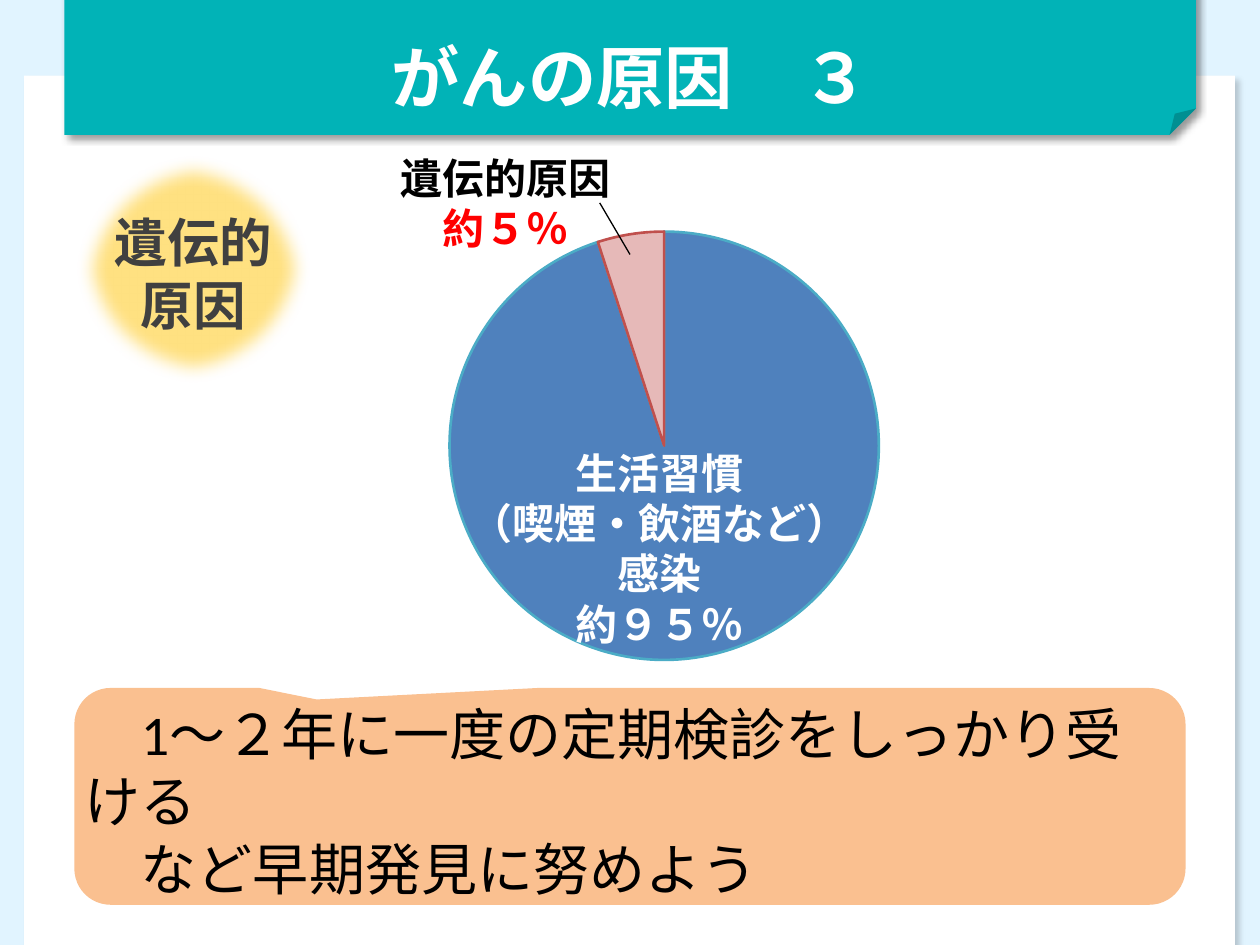
from lxml import etree
from pptx import Presentation
from pptx.chart.data import CategoryChartData
from pptx.dml.color import RGBColor
from pptx.enum.chart import XL_CHART_TYPE as ChartKind
from pptx.enum.shapes import MSO_CONNECTOR as Connector, MSO_SHAPE as Preset
from pptx.enum.text import MSO_ANCHOR as Anchor, PP_ALIGN as Align
from pptx.oxml import parse_xml
from pptx.oxml.ns import nsdecls, qn
from pptx.util import Cm, Pt

hex_color = RGBColor.from_string


def write(frame, lines, align, anchor, **font_format):
    frame.word_wrap = True
    frame.vertical_anchor = anchor
    for number, (wording, color) in enumerate(lines):
        line = frame.paragraphs[0] if number == 0 else frame.add_paragraph()
        line.alignment = align
        run = line.add_run()
        run.text = wording
        run.font.color.rgb = hex_color(color)
        for key, value in font_format.items():
            setattr(run.font, key, value)


deck = Presentation()
deck.slide_width, deck.slide_height = Cm(25.4), Cm(19.05)
slide = deck.slides.add_slide(deck.slide_layouts[5])
slide.background.fill.solid()
slide.background.fill.fore_color.rgb = hex_color("E1F4FF")
shapes = slide.shapes
badge = shapes.add_group_shape()

panels = []
for parent, preset, box, color in [
    (shapes, Preset.RECTANGLE, (3.71, -1.7, 17.96, 24.41), "FFFFFF"),
    (shapes, Preset.FOLDED_CORNER, (1.3, -0.48, 22.81, 3.2), "01B3B7"),
    (badge.shapes, Preset.OVAL, (1.5, 3.1, 4.8, 4.65), "FFE181"),
    (shapes, Preset.ROUNDED_RECTANGULAR_CALLOUT, (1.5, 13.87, 22.4, 4.37), "FAC090"),
]:
    panel = parent.add_shape(preset, *[Cm(length) for length in box])
    panel.shadow.inherit = False
    panel.fill.solid()
    panel.fill.fore_color.rgb = hex_color(color)
    panel.line.fill.background()
    panels.append(panel)
page, banner, glow, advice = panels
page.rotation = 270

for panel, opacity, blur, distance in [(page, 18, 3, 4), (banner, 40, 4, 3)]:
    effects = panel.element.spPr.find(qn("a:effectLst"))
    effects.append(parse_xml(
        f'<a:outerShdw {nsdecls("a")} blurRad="{Pt(blur)}" dist="{Pt(distance)}" '
        f'dir="2700000" algn="tl" rotWithShape="0"><a:srgbClr val="000000">'
        f'<a:alpha val="{opacity * 1000}"/></a:srgbClr></a:outerShdw>'))
glow_effects = glow.element.spPr.find(qn("a:effectLst"))
etree.SubElement(glow_effects, qn("a:softEdge"), rad=str(Pt(10)))

badge_label = badge.shapes.add_textbox(Cm(2), Cm(4.11), Cm(3.8), Cm(2.18))
write(badge_label.text_frame, [("遺伝的", "404040"), ("原因", "404040")],
      Align.CENTER, Anchor.TOP, size=Pt(30), name="Calibri", bold=True)

heading = shapes.title
for key, value in dict(left=0.91, top=0.56, width=23.6, height=1.96).items():
    setattr(heading, key, Cm(value))
write(heading.text_frame, [("がんの原因　３", "FFFFFF")],
      Align.CENTER, Anchor.MIDDLE, size=Pt(39), name="Calibri", bold=True)

tree = heading.element.getparent()
for part in (badge, heading, advice):
    tree.append(part.element)

for index, value in enumerate([-0.282, -0.447, 0.167]):
    advice.adjustments[index] = value
for key, value in dict(left=0, top=0.3, right=0, bottom=0.13).items():
    setattr(advice.text_frame, f"margin_{key}", Cm(value))
write(advice.text_frame,
      [("　1～２年に一度の定期検診をしっかり受ける", "000000"),
       ("　など早期発見に努めよう", "000000")],
      Align.LEFT, Anchor.MIDDLE, size=Pt(32), name="Calibri")

causes = CategoryChartData()
causes.categories = ["1", "2"]
causes.add_series("Series 1", [95, 5])
pie = shapes.add_chart(ChartKind.PIE, Cm(5.69), Cm(2.51), Cm(14), Cm(10.82), causes).chart
for key, value in dict(has_legend=False, has_title=False).items():
    setattr(pie, key, value)
for key, value in dict(size=Pt(20), name="Calibri").items():
    setattr(pie.font, key, value)
pie.font.color.rgb = hex_color("000000")
plot = pie.plots[0]
plot.vary_by_categories = True
for index, (color, edge) in enumerate([("4F81BD", "4BACC6"), ("E6B9B8", "C0504D")]):
    wedge = plot.series[0].points[index].format
    wedge.fill.solid()
    wedge.fill.fore_color.rgb = hex_color(color)
    wedge.line.color.rgb = hex_color(edge)
    wedge.line.width = Pt(1.5)

plot_area = pie.element.find(".//" + qn("c:plotArea"))
for old_layout in plot_area.findall(qn("c:layout")):
    plot_area.remove(old_layout)
layout = etree.Element(qn("c:layout"))
manual = etree.SubElement(layout, qn("c:manualLayout"))
for tag, value in [("layoutTarget", "inner"), ("xMode", "edge"), ("yMode", "edge"),
                   ("x", "0.21"), ("y", "0.2"), ("w", "0.68"), ("h", "0.8")]:
    etree.SubElement(manual, qn(f"c:{tag}"), val=value)
plot_area.insert(0, layout)

heredity = [("遺伝的原因", "000000"), ("約５％", "FF0000")]
lifestyle = [(wording, "FFFFFF") for wording in
             ("生活習慣", "（喫煙・飲酒など）", "感染", "約９５％")]
for box, lines in [((7.49, 3.05, 5.41, 2.08), heredity),
                   ((8.86, 8.76, 8.89, 4.57), lifestyle)]:
    label = shapes.add_textbox(*[Cm(length) for length in box])
    write(label.text_frame, lines, Align.CENTER, Anchor.MIDDLE,
          size=Pt(24), name="Calibri", bold=True)

leader = shapes.add_connector(Connector.STRAIGHT, Cm(12.09), Cm(4.09), Cm(12.7), Cm(5.13))
leader.line.color.rgb = hex_color("000000")
leader.line.width = Pt(0.75)
etree.SubElement(leader.element.spPr, qn("a:effectLst"))

deck.save("out.pptx")
